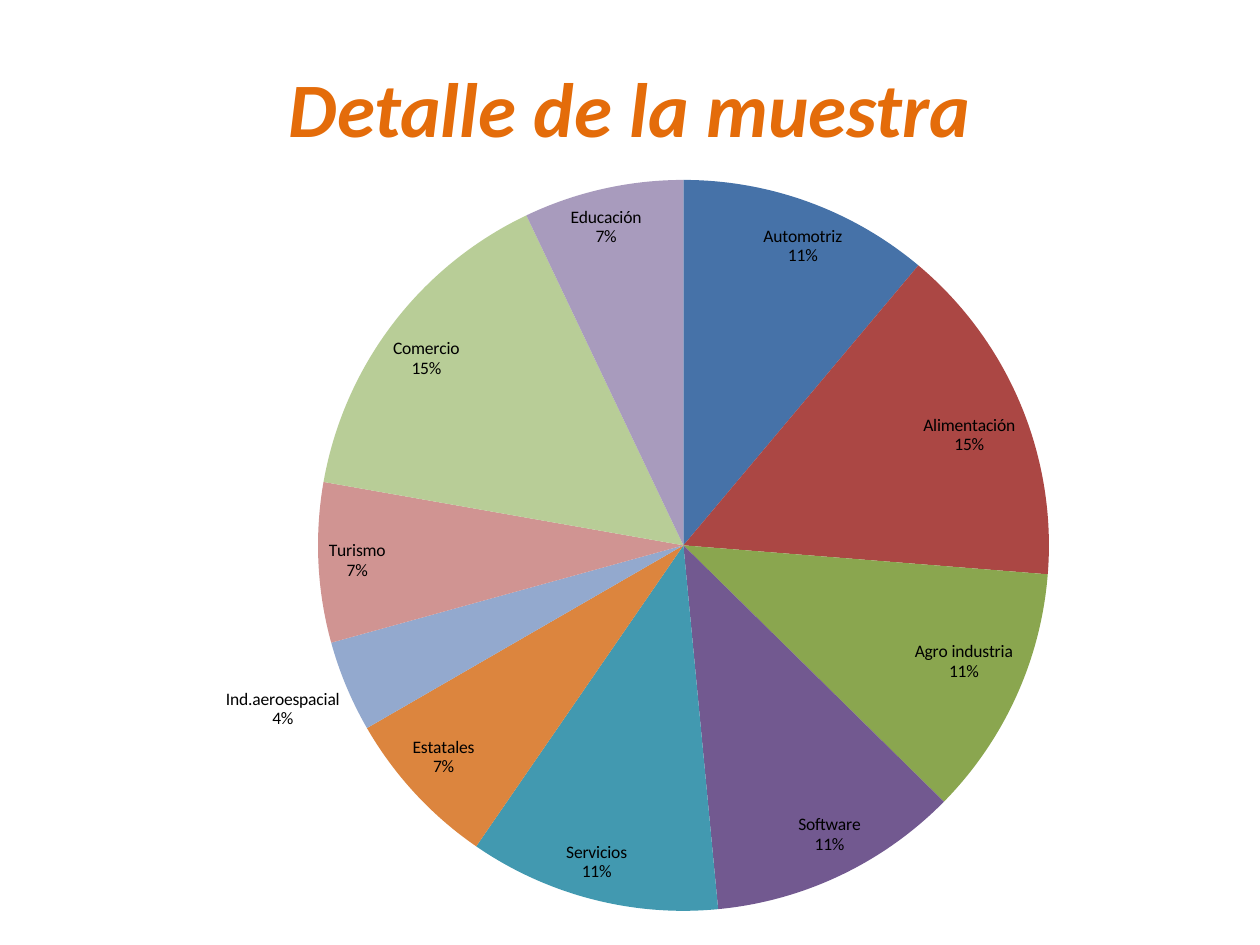
from lxml import etree
from pptx import Presentation
from pptx.chart.data import CategoryChartData
from pptx.dml.color import RGBColor
from pptx.enum.chart import XL_CHART_TYPE as ChartType, XL_LABEL_POSITION as LabelPosition
from pptx.enum.text import MSO_ANCHOR as Anchor, PP_ALIGN as Align
from pptx.oxml.ns import qn
from pptx.util import Pt

PX = 914400 // 126
FONT = "Calibri"
ORANGE = RGBColor(0xE4, 0x6C, 0x0A)
BLACK = RGBColor(0, 0, 0)

TITLE = "Detalle de la muestra"
SECTORS = [
    ("Automotriz", 11, RGBColor(0x46, 0x72, 0xA8)),
    ("Alimentación", 15, RGBColor(0xAB, 0x47, 0x44)),
    ("Agro industria", 11, RGBColor(0x8A, 0xA6, 0x4F)),
    ("Software", 11, RGBColor(0x72, 0x59, 0x90)),
    ("Servicios", 11, RGBColor(0x42, 0x99, 0xB0)),
    ("Estatales", 7, RGBColor(0xDC, 0x85, 0x3E)),
    ("Ind.aeroespacial", 4, RGBColor(0x93, 0xA9, 0xCE)),
    ("Turismo", 7, RGBColor(0xD0, 0x94, 0x92)),
    ("Comercio", 15, RGBColor(0xB8, 0xCD, 0x97)),
    ("Educación", 7, RGBColor(0xA8, 0x9B, 0xBD)),
]

# left, top, width, height in px
SLIDE_SIZE = (1260, 945)
TITLE_BOX = (63, 38, 1134, 137)
CHART_BOX = (0, 121, 1260, 808)
PIE_BOX = (318, 180, 731, 731)


def emu(lengths):
    return [length * PX for length in lengths]


def format_font(font, size, color, bold=False, italic=False):
    font.name, font.size = FONT, Pt(size)
    font.bold, font.italic = bold, italic
    font.color.rgb = color


def write(shape, text, align=Align.CENTER, anchor=Anchor.MIDDLE, **font_format):
    frame = shape.text_frame
    frame.word_wrap = True
    frame.vertical_anchor = anchor
    paragraph = frame.paragraphs[0]
    paragraph.alignment = align
    run = paragraph.add_run()
    run.text = text
    format_font(run.font, **font_format)


def place_plot(chart, plot_box, chart_box):
    """Fix the inner plot area at plot_box, as fractions of chart_box."""
    left, top, width, height = chart_box
    x, y, w, h = plot_box
    fractions = {"x": (x - left) / width, "y": (y - top) / height,
                 "w": w / width, "h": h / height}
    plot_area = chart.plots[0]._element.getparent()
    for old in plot_area.findall(qn("c:layout")):
        plot_area.remove(old)
    layout = etree.Element(qn("c:layout"))
    manual = etree.SubElement(layout, qn("c:manualLayout"))
    settings = [("layoutTarget", "inner"), ("xMode", "edge"), ("yMode", "edge")]
    settings += [(key, f"{value:.4f}") for key, value in fractions.items()]
    for tag, value in settings:
        etree.SubElement(manual, qn(f"c:{tag}")).set("val", value)
    plot_area.insert(0, layout)


def add_sector_pie(slide):
    data = CategoryChartData()
    data.categories = [name for name, _, _ in SECTORS]
    data.add_series("Series 1", [share for _, share, _ in SECTORS])
    chart = slide.shapes.add_chart(ChartType.PIE, *emu(CHART_BOX), data).chart
    chart.has_title = False
    chart.has_legend = False
    format_font(chart.font, 10, BLACK)

    pie = chart.plots[0]
    pie.vary_by_categories = True
    for index, (_, _, color) in enumerate(SECTORS):
        slice_format = pie.series[0].points[index].format
        slice_format.fill.solid()
        slice_format.fill.fore_color.rgb = color
        slice_format.line.fill.background()

    pie.has_data_labels = True
    labels = pie.data_labels
    labels.show_category_name = True
    labels.show_percentage = True
    labels.show_value = False
    labels.number_format = "0%"
    labels.number_format_is_linked = False
    labels.position = LabelPosition.BEST_FIT
    format_font(labels.font, 10, BLACK)
    separator = etree.Element(qn("c:separator"))
    separator.text = "\n"
    labels._element.find(qn("c:showBubbleSize")).addnext(separator)
    place_plot(chart, PIE_BOX, CHART_BOX)


def main():
    deck = Presentation()
    deck.slide_width, deck.slide_height = emu(SLIDE_SIZE)
    slide = deck.slides.add_slide(deck.slide_layouts[5])
    title = slide.shapes.title
    title.left, title.top, title.width, title.height = emu(TITLE_BOX)
    write(title, TITLE, size=44, color=ORANGE, bold=True, italic=True)
    add_sector_pie(slide)
    deck.save("out.pptx")


if __name__ == "__main__":
    main()
